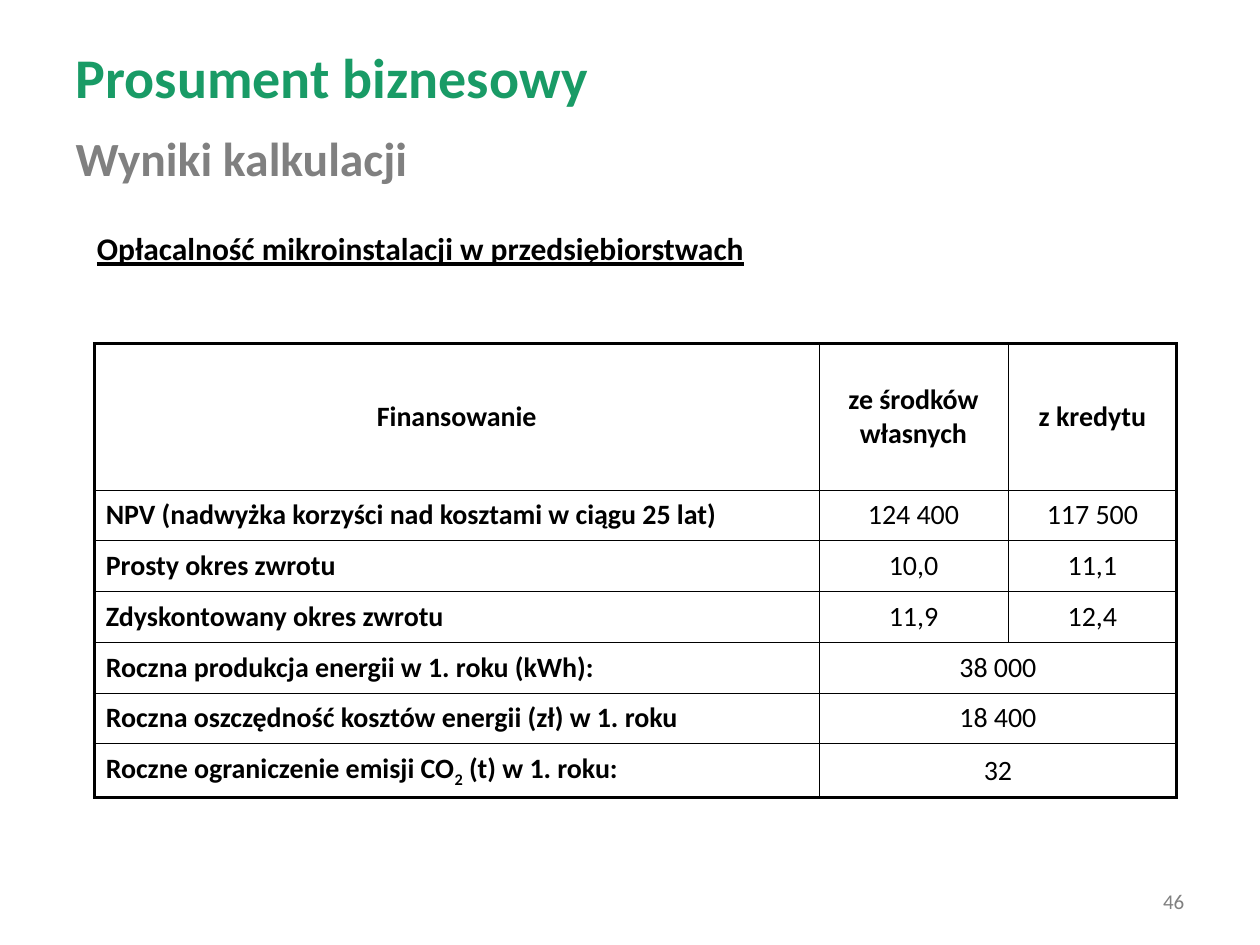
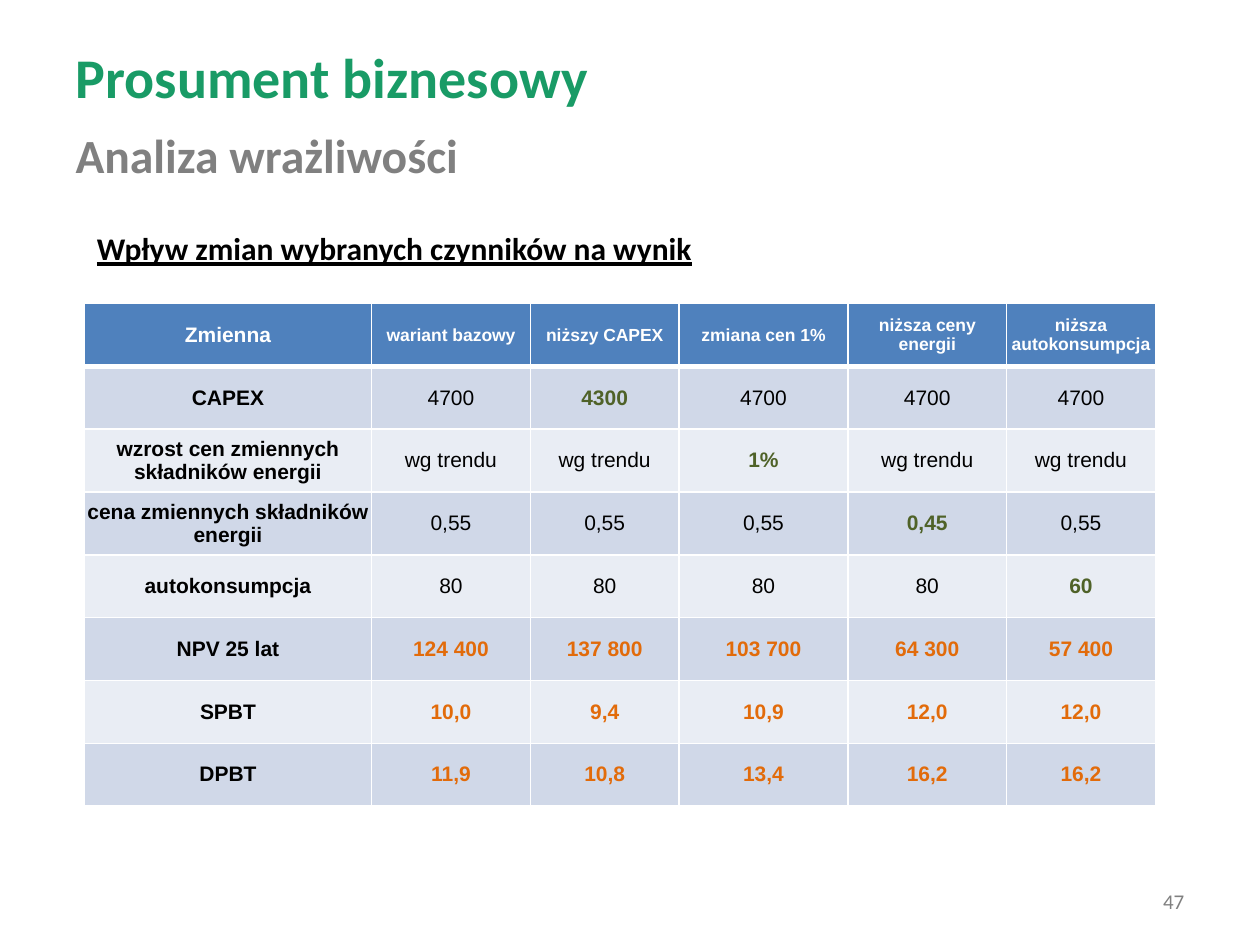
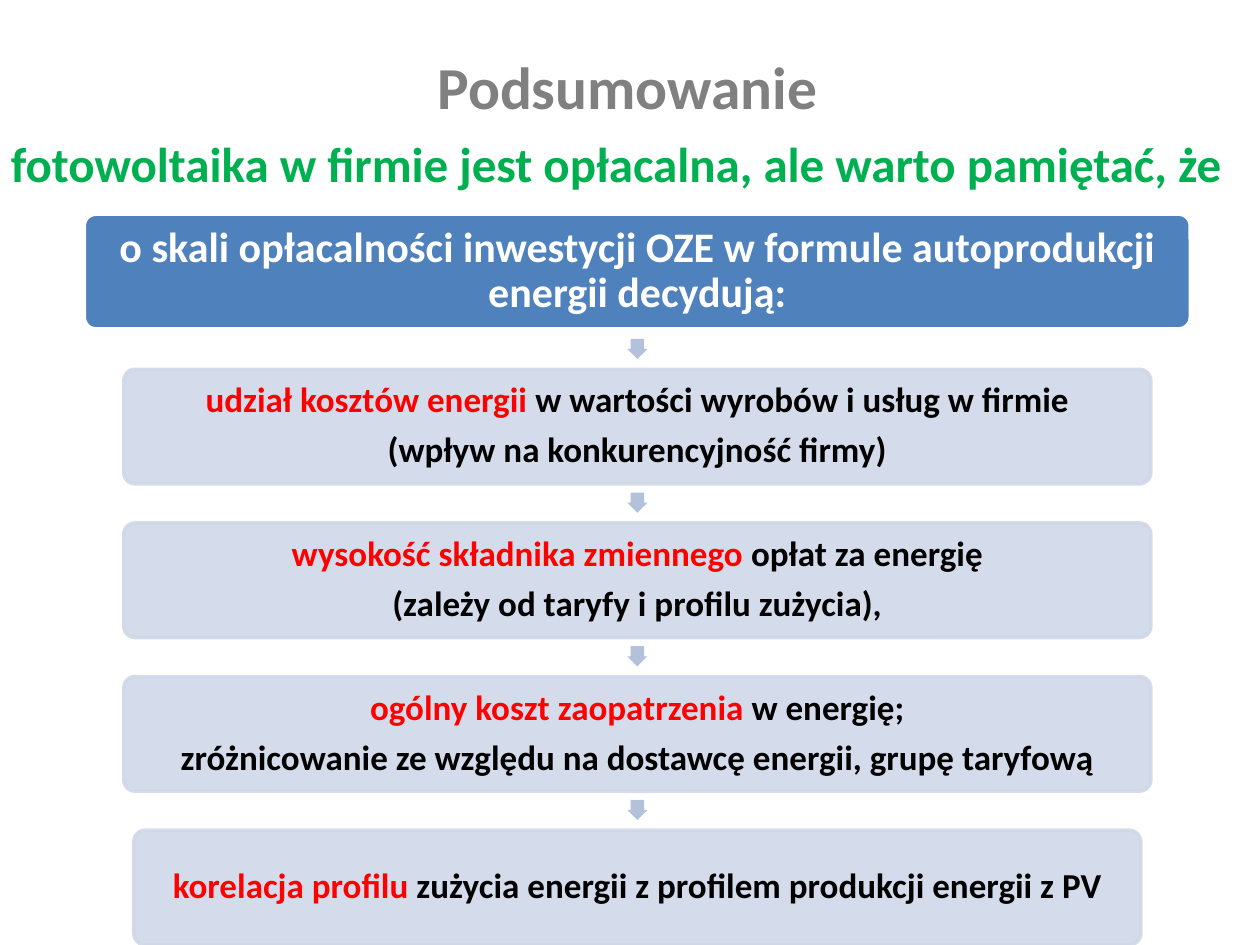
from lxml.etree import SubElement
from pptx import Presentation
from pptx.dml.color import RGBColor
from pptx.enum.shapes import MSO_SHAPE
from pptx.enum.text import MSO_ANCHOR, MSO_AUTO_SIZE, PP_ALIGN
from pptx.oxml.ns import qn
from pptx.util import Pt

BLACK = RGBColor(0x00, 0x00, 0x00)
WHITE = RGBColor(0xFF, 0xFF, 0xFF)
GRAY = RGBColor(0x80, 0x80, 0x80)
GREEN = RGBColor(0x19, 0x9B, 0x66)
LIME = RGBColor(0x00, 0xB0, 0x50)
OLIVE = RGBColor(0x4F, 0x62, 0x28)
ORANGE = RGBColor(0xE2, 0x6B, 0x0A)
RED = RGBColor(0xFF, 0x00, 0x00)
BLUE = RGBColor(0x4F, 0x81, 0xBD)
PALE = RGBColor(0xD0, 0xD8, 0xE8)
LIGHT = RGBColor(0xE9, 0xED, 0xF4)
STEEL = RGBColor(0xB3, 0xC1, 0xDB)
LEFT, MID, RIGHT = PP_ALIGN.LEFT, PP_ALIGN.CENTER, PP_ALIGN.RIGHT


def write(para, text, size, color, bold=True, face="Calibri"):
    run = para.add_run()
    run.text = text
    font = run.font
    font.name, font.size, font.bold = face, Pt(size), bold
    font.color.rgb = color
    return run


def style(cell, color, widths):
    """Draw the left, right, top and bottom borders and clear the margins."""
    props = cell._tc.get_or_add_tcPr()
    for side, width in zip("LRTB", widths):
        line = SubElement(props, qn("a:ln" + side), w=str(Pt(width)))
        fill = SubElement(line, qn("a:solidFill"))
        SubElement(fill, qn("a:srgbClr"), val=str(color))
    cell.margin_left = cell.margin_right = 0
    cell.margin_top = cell.margin_bottom = 0
    cell.vertical_anchor = MSO_ANCHOR.MIDDLE


prs = Presentation()
prs.slide_width, prs.slide_height = Pt(720), Pt(540)

# Titles, subtitles, section heads and page numbers:
# text, left, top, width, height, size, colour, alignment
BRAND = ("Prosument biznesowy", 43.2, 24, 570, 40, 32, GREEN, LEFT)
heads = [
    [BRAND,
     ("Wyniki kalkulacji", 43.2, 73.5, 587, 34, 27.2, GRAY, LEFT),
     ("Opłacalność mikroinstalacji w przedsiębiorstwach",
      55.4, 131, 643, 22, 18, BLACK, LEFT),
     ("46", 523, 507.5, 153.8, 15, 12, GRAY, RIGHT)],
    [BRAND,
     ("Analiza wrażliwości", 43.2, 72, 587, 34, 27.2, GRAY, LEFT),
     ("Wpływ zmian wybranych czynników na wynik",
      55.4, 131, 643, 22, 18, BLACK, LEFT),
     ("47", 523, 507.5, 153.8, 15, 12, GRAY, RIGHT)],
    [("Podsumowanie", 0, 28.8, 717, 42, 34, GRAY, MID),
     ("fotowoltaika w firmie jest opłacalna, ale warto pamiętać, że",
      0, 76.2, 704, 35, 28, LIME, MID)],
]
slides = []
for items in heads:
    slide = prs.slides.add_slide(prs.slide_layouts[5])
    slides.append(slide)
    for i, (text, x, y, w, h, size, color, align) in enumerate(items):
        place = Pt(x), Pt(y), Pt(w), Pt(h)
        if i == 0:
            box = slide.shapes.title
            box.left, box.top, box.width, box.height = place
        else:
            box = slide.shapes.add_textbox(*place)
        frame = box.text_frame
        frame.word_wrap, frame.auto_size = True, MSO_AUTO_SIZE.NONE
        frame.vertical_anchor = MSO_ANCHOR.TOP
        frame.margin_left = frame.margin_right = 0
        frame.margin_top = frame.margin_bottom = 0
        para = frame.paragraphs[0]
        para.alignment = align
        run = write(para, text, size, color, bold=i < 3)
        run.font.underline = i == 2 or None

# Slide 1: profitability table
rows = [
    ("Finansowanie", "ze środków własnych", "z kredytu"),
    ("NPV (nadwyżka korzyści nad kosztami w ciągu 25 lat)", "124 400", "117 500"),
    ("Prosty okres zwrotu", "10,0", "11,1"),
    ("Zdyskontowany okres zwrotu", "11,9", "12,4"),
    ("Roczna produkcja energii w 1. roku (kWh):", "38 000"),
    ("Roczna oszczędność kosztów energii (zł) w 1. roku", "18 400"),
    ("Roczne ograniczenie emisji CO|2| (t) w 1. roku:", "32"),
]
cols = (414, 108, 96.5)
highs = (83.5, 29, 29, 29, 29, 29, 31)
table = slides[0].shapes.add_table(
    len(rows), len(cols), Pt(54), Pt(196.5), Pt(sum(cols)), Pt(sum(highs))).table
table.first_row = table.horz_banding = False
for c, width in enumerate(cols):
    table.columns[c].width = Pt(width)
for r, row in enumerate(rows):
    table.rows[r].height = Pt(highs[r])
    for c in range(len(cols)):
        cell = table.cell(r, c)
        last = c >= len(row) - 1
        style(cell, BLACK, (2 if c == 0 else 0.5, 2 if last else 0.5,
                            2 if r == 0 else 0.5, 2 if r == len(rows) - 1 else 0.5))
        cell.fill.background()
        if c >= len(row):
            table.cell(r, c - 1).merge(cell)
            continue
        label = c == 0 and r > 0
        para = cell.text_frame.paragraphs[0]
        para.alignment = LEFT if label else MID
        if label:
            cell.margin_left = Pt(6.5)
        for i, part in enumerate(row[c].split("|")):
            run = write(para, part, 16, BLACK, bold=r == 0 or c == 0)
            if i == 1:
                run._r.get_or_add_rPr().set("baseline", "-25000")

# Slide 2: sensitivity table
rows = [
    ("Zmienna", "wariant bazowy", "niższy CAPEX", "zmiana cen 1%",
     "niższa ceny energii", "niższa autokonsumpcja"),
    ("CAPEX", "4700", "4300", "4700", "4700", "4700"),
    ("wzrost cen zmiennych składników energii",
     "wg trendu", "wg trendu", "1%", "wg trendu", "wg trendu"),
    ("cena zmiennych składników energii", "0,55", "0,55", "0,55", "0,45", "0,55"),
    ("autokonsumpcja", "80", "80", "80", "80", "60"),
    ("NPV 25 lat", "124 400", "137 800", "103 700", "64 300", "57 400"),
    ("SPBT", "10,0", "9,4", "10,9", "12,0", "12,0"),
    ("DPBT", "11,9", "10,8", "13,4", "16,2", "16,2"),
]
cols = (164.2, 90.7, 85, 96.5, 90.7, 85)
high = 35.9
table = slides[1].shapes.add_table(
    len(rows), len(cols), Pt(48.2), Pt(173.5), Pt(sum(cols)), Pt(high * len(rows))).table
for c, width in enumerate(cols):
    table.columns[c].width = Pt(width)
for r, row in enumerate(rows):
    table.rows[r].height = Pt(high)
    for c, text in enumerate(row):
        cell = table.cell(r, c)
        style(cell, WHITE, (1, 1, 3 if r == 1 else 1, 3 if r == 0 else 1))
        cell.fill.solid()
        cell.fill.fore_color.rgb = BLUE if r == 0 else PALE if r % 2 else LIGHT
        # The changed factor differs from the base variant
        if r == 0:
            color = WHITE
        elif c == 0:
            color = BLACK
        elif r > 4:
            color = ORANGE
        else:
            color = OLIVE if text != row[1] else BLACK
        para = cell.text_frame.paragraphs[0]
        para.alignment = MID
        write(para, text, 10 if r == 0 and c else 12, color,
              bold=c == 0 or color != BLACK, face="Arial")

# Slide 3: chain of boxes, each a list of paragraphs of (text, colour) runs
chain = [
    [[("o skali opłacalności inwestycji OZE w formule autoprodukcji energii decydują:",
       WHITE)]],
    [[("udział kosztów energii ", RED), ("w wartości wyrobów i usług w firmie", BLACK)],
     [("(wpływ na konkurencyjność firmy)", BLACK)]],
    [[("wysokość składnika zmiennego ", RED), ("opłat za energię", BLACK)],
     [("(zależy od taryfy i profilu zużycia),", BLACK)]],
    [[("ogólny koszt zaopatrzenia ", RED), ("w energię;", BLACK)],
     [("zróżnicowanie ze względu na dostawcę energii, grupę taryfową", BLACK)]],
    [[("korelacja profilu ", RED),
      ("zużycia energii z profilem produkcji energii z PV", BLACK)]],
]
wides = (632, 587, 587, 587, 575.5)
axis, high, step, start = 364.2, 65.5, 87.8, 211
shapes = slides[2].shapes
for i, (paras, width) in enumerate(zip(chain, wides)):
    top = start + (i - 1) * step if i else 122.4
    box = shapes.add_shape(MSO_SHAPE.ROUNDED_RECTANGLE, Pt(axis - width / 2),
                           Pt(top), Pt(width), Pt(high))
    box.shadow.inherit = False
    box.adjustments[0] = 0.1
    box.fill.solid()
    box.fill.fore_color.rgb = PALE if i else BLUE
    box.line.color.rgb = PALE if i else WHITE
    box.line.width = Pt(2)
    if i:
        for tint in box._element.spPr.iter(qn("a:srgbClr")):
            SubElement(tint, qn("a:alpha"), val="90000")

    frame = box.text_frame
    frame.word_wrap, frame.vertical_anchor = True, MSO_ANCHOR.MIDDLE
    frame.margin_left = frame.margin_right = Pt(2)
    frame.margin_top = frame.margin_bottom = Pt(2)
    size = 20 if i else 24
    for n, runs in enumerate(paras):
        para = frame.add_paragraph() if n else frame.paragraphs[0]
        para.alignment, para.line_spacing = MID, 0.9
        para.space_after = Pt(0.35 * size)
        for text, color in runs:
            write(para, text, size, color)

    # Arrow from the box above
    if i:
        arrow = shapes.add_shape(MSO_SHAPE.RIGHT_ARROW, Pt(axis - 5.75),
                                 Pt(top - 17.3), Pt(11.5), Pt(11.5))
        arrow.rotation = 90
        arrow.adjustments[0], arrow.adjustments[1] = 0.67, 0.5
        arrow.shadow.inherit = False
        arrow.fill.solid()
        arrow.fill.fore_color.rgb = STEEL
        arrow.line.fill.background()

prs.save("out.pptx")
